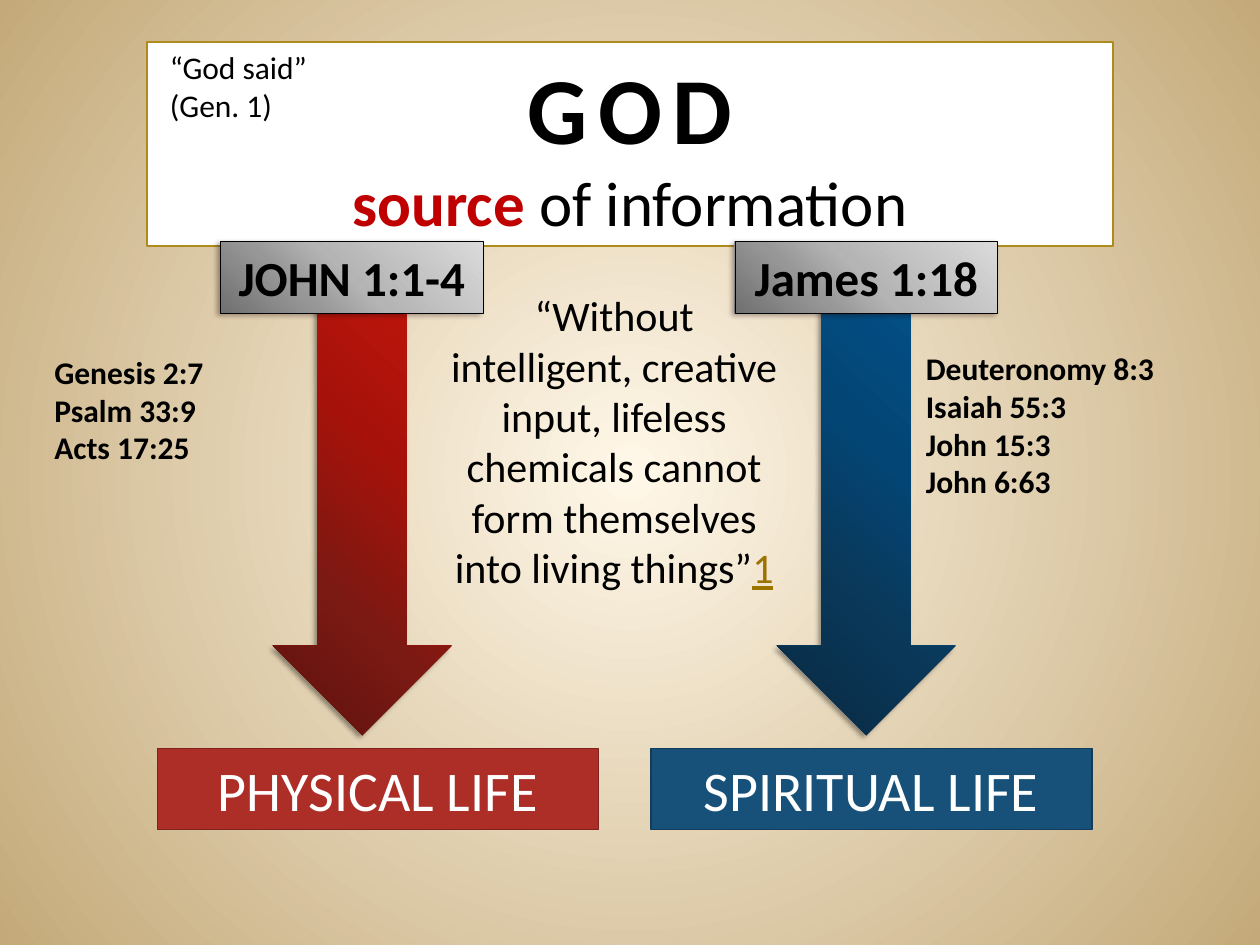
from lxml.etree import SubElement
from pptx import Presentation
from pptx.dml.color import RGBColor
from pptx.enum.shapes import MSO_SHAPE as SHAPE
from pptx.enum.text import MSO_ANCHOR as ANCHOR, PP_ALIGN as ALIGN
from pptx.oxml.ns import qn
from pptx.util import Inches, Pt

BLACK = RGBColor(0x00, 0x00, 0x00)
WHITE = RGBColor(0xFF, 0xFF, 0xFF)
GOLD = RGBColor(0xAF, 0x8B, 0x1E)
LINK = RGBColor(0x9B, 0x73, 0x00)
SOURCE_RED = RGBColor(0xC0, 0x00, 0x00)
RED, RED_EDGE = RGBColor(0xAD, 0x2E, 0x27), RGBColor(0x80, 0x22, 0x1D)
BLUE, BLUE_EDGE = RGBColor(0x17, 0x51, 0x7A), RGBColor(0x11, 0x3C, 0x5A)
SHADE = RGBColor(0x1A, 0x00, 0x00)
PARCHMENT = [(0, RGBColor(0xFF, 0xF7, 0xE8)), (100, RGBColor(0xC4, 0xAA, 0x7A))]
RED_FADE = [(0, RGBColor(0xC8, 0x16, 0x0C)), (40, RGBColor(0xA6, 0x12, 0x0A)),
            (70, RGBColor(0x7B, 0x19, 0x13)), (100, RGBColor(0x5B, 0x12, 0x0E))]
BLUE_FADE = [(0, RGBColor(0x03, 0x54, 0x8E)), (40, RGBColor(0x03, 0x46, 0x76)),
             (70, RGBColor(0x0A, 0x37, 0x57)), (100, RGBColor(0x08, 0x29, 0x40))]
GREY_FADE = [(0, RGBColor(0xDA, 0xDA, 0xDA)), (50, RGBColor(0xB4, 0xB4, 0xB4)),
             (70, RGBColor(0x97, 0x97, 0x97)), (100, RGBColor(0x70, 0x70, 0x70))]

prs = Presentation()
prs.slide_width, prs.slide_height = Inches(10), Inches(7.5)
COL, ROW = prs.slide_width / 120, prs.slide_height / 90
s = prs.slides.add_slide(prs.slide_layouts[6])


def set_gradient(fill, element, stops):
    fill.gradient()
    grad = element.find(".//" + qn("a:gradFill"))
    for child in list(grad):
        grad.remove(child)
    gs_list = SubElement(grad, qn("a:gsLst"))
    for pos, color in stops:
        gs = SubElement(gs_list, qn("a:gs"), pos=str(pos * 1000))
        SubElement(gs, qn("a:srgbClr"), val=str(color))
    return grad


def add_box(kind, x, y, w, h, lines=(), size=18, color=BLACK, bold=False,
            align=ALIGN.CENTER, fill=None, edge=None, edge_width=1, shadow=None):
    box = [int(x * COL), int(y * ROW), int(w * COL), int(h * ROW)]
    if kind is None:
        sp = s.shapes.add_textbox(*box)
    else:
        sp = s.shapes.add_shape(kind, *box)
        sp.shadow.inherit = False
        if isinstance(fill, list):
            grad = set_gradient(sp.fill, sp._element.spPr, fill)
            SubElement(grad, qn("a:lin"), ang=str(133 * 60000), scaled="0")
        else:
            sp.fill.solid()
            sp.fill.fore_color.rgb = fill
        if edge is None:
            sp.line.fill.background()
        else:
            sp.line.color.rgb = edge
            sp.line.width = Pt(edge_width)
    if shadow:
        shade, alpha = shadow
        effects = sp._element.spPr.find(qn("a:effectLst"))
        outer = SubElement(effects, qn("a:outerShdw"), blurRad=str(Pt(3.1)), dist=str(Pt(2)),
                           dir=str(150 * 60000), rotWithShape="0")
        clr = SubElement(outer, qn("a:srgbClr"), val=str(shade))
        SubElement(clr, qn("a:alpha"), val=str(alpha * 1000))
    tf = sp.text_frame
    tf.word_wrap = True
    tf.vertical_anchor = ANCHOR.MIDDLE if kind else ANCHOR.TOP
    for i, line in enumerate(lines):
        p = tf.paragraphs[0] if i == 0 else tf.add_paragraph()
        p.alignment = align
        p.font.name, p.font.size, p.font.bold = "Calibri", Pt(size), bold
        p.font.color.rgb = color
        p.add_run().text = line
    return tf


grad = set_gradient(s.background.fill, s._element, PARCHMENT)
focus = SubElement(grad, qn("a:path"), path="circle")
SubElement(focus, qn("a:fillToRect"), l="50000", t="50000", r="50000", b="50000")

tf = add_box(SHAPE.RECTANGLE, 14, 4, 92, 19.44, ["GOD", "source "], size=36, bold=True,
             fill=WHITE, edge=GOLD)
god, source = tf.paragraphs
god.font.size = Pt(54)
god.runs[0]._r.get_or_add_rPr().set("spc", "600")
source.runs[0].font.color.rgb = SOURCE_RED
r = source.add_run()
r.text = "of information"
r.font.bold = False

for x, label, fill, edge in [(15, "PHYSICAL LIFE", RED, RED_EDGE),
                             (62, "SPIRITUAL LIFE", BLUE, BLUE_EDGE)]:
    add_box(SHAPE.RECTANGLE, x, 71.3, 42, 7.7, [label], size=32, color=WHITE, fill=fill, edge=edge)

for x, fade in [(26, RED_FADE), (74, BLUE_FADE)]:
    add_box(SHAPE.DOWN_ARROW, x, 24, 17, 46, fill=fade, shadow=(BLACK, 40))

add_box(None, 15, 4, 22, 8.5, ["“God said” (Gen. 1)"], align=ALIGN.LEFT)
add_box(None, 87, 32.65, 25, 15.7, ["Deuteronomy 8:3", "Isaiah 55:3", "John 15:3", "John 6:63"],
        bold=True, align=ALIGN.LEFT)
quote = "“Without intelligent, creative input, lifeless chemicals cannot form themselves into living things”"
tf = add_box(None, 41, 27, 35, 30.25, [quote], size=24)
r = tf.paragraphs[0].add_run()
r.text = "1"
r.font.underline = True
r.font.color.rgb = LINK

for x, verse in [(21, "JOHN 1:1-4"), (70, "James 1:18")]:
    add_box(SHAPE.RECTANGLE, x, 23, 25, 6.85, [verse], size=28, bold=True, fill=GREY_FADE,
            edge=BLACK, edge_width=0.39, shadow=(SHADE, 35))

add_box(None, 4, 33, 25, 12.1, ["Genesis 2:7", "Psalm 33:9", "Acts 17:25"],
        bold=True, align=ALIGN.LEFT)

prs.save("out.pptx")
